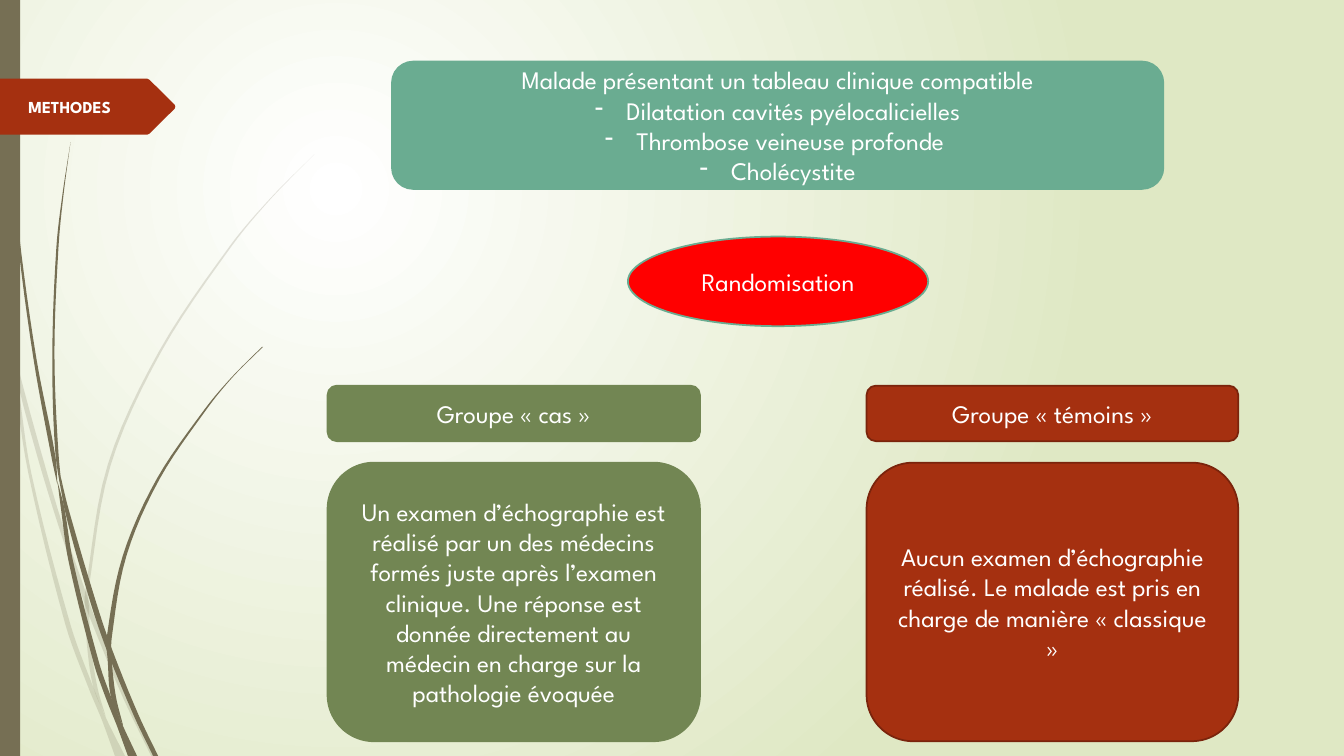
from pptx import Presentation
from pptx.dml.color import RGBColor
from pptx.enum.shapes import MSO_SHAPE as Form
from pptx.enum.text import MSO_ANCHOR as Anchor, MSO_AUTO_SIZE as Fit, PP_ALIGN as Align
from pptx.oxml.ns import qn
from pptx.util import Pt
from lxml.etree import SubElement as sub

WHITE = RGBColor(0xFF, 0xFF, 0xFF)
LIME = RGBColor(0xDF, 0xE8, 0xC4)
BROWN = RGBColor(0x76, 0x6F, 0x54)
RUST = RGBColor(0xA5, 0x30, 0x10)
DARK = RGBColor(0x7A, 0x24, 0x0C)
GREEN = RGBColor(0x72, 0x86, 0x53)
TEAL = RGBColor(0x6A, 0xAC, 0x91)
RED = RGBColor(0xFF, 0x00, 0x00)

WIDE, HIGH = 960, 540
BODY = {"name": "League Spartan", "size": Pt(18), "bold": False}
HEAD = {"name": "League Spartan", "size": Pt(12), "bold": True}

# Each stem is a list of rows: y, left edge, right edge
PALE = [
    [(203, 0, 0), (215.3, 0, 2.9), (231.8, 3.6, 6.5), (252, 7.9, 7.9)],
    [(248.4, 10.1, 10.1), (270.7, 12.2, 15.1), (323.3, 25.9, 29.5), (374.4, 41.4, 44.6),
     (424.8, 58.3, 61.9), (439.2, 63.4, 67), (498.2, 87.8, 91.4), (540, 108, 111.6)],
    [(252, 7.9, 7.9), (270.7, 10.1, 12.2), (337.7, 20.2, 22.3), (446.4, 46.8, 50.4),
     (491.8, 63.4, 67), (514.1, 72.7, 76.3), (540, 82.1, 89.3)],
    [(110.2, 224.6, 224.6), (141.8, 193, 193.7), (175.7, 164.2, 165.6),
     (250.6, 113.8, 115.6), (331.9, 77, 79.2), (420.5, 61.2, 63.4), (431.3, 60.5, 63.4),
     (465.1, 62.6, 65.5), (491.8, 67, 69.8), (511.9, 75.6, 75.6)],
]
DEEP = [
    [(0, 2.2, 2.9), (34.6, 2.9, 3.6), (79.2, 5, 5.8), (167.8, 12.2, 13.7),
     (255.6, 23.8, 25.9), (326.2, 36.7, 39.6), (346.3, 41, 41)],
    [(339.8, 43.2, 43.2), (363.6, 46.1, 49), (424.8, 63, 67), (461.5, 75.2, 79.2),
     (509.8, 95, 98.6), (540, 109.4, 113)],
    [(343.4, 41, 41), (363.6, 43.6, 46.1), (401, 49, 52.2), (473.8, 67, 70.9),
     (497.5, 75.2, 79.2), (518.4, 83.5, 87.8), (540, 91.4, 97.9)],
    [(101.5, 50.4, 50.4), (139, 44.6, 45.4), (176.4, 40.3, 41.8), (251.3, 37.4, 38.9),
     (324, 39.6, 41.8), (363.6, 46.1, 46.1)],
    [(247.7, 187.2, 187.9), (269.3, 165.6, 166.3), (292.3, 146.2, 147.6),
     (342, 112, 114.1), (396.7, 87.8, 90.4), (455, 76.3, 79.9), (472.3, 77, 79.9),
     (497.5, 79.2, 82.8), (517.7, 87.5, 87.8)],
]


def style(obj, vals):
    for key, val in vals.items():
        setattr(obj, key, val)


def paint(shape, fill, line=None):
    shape.shadow.inherit = False
    shape.fill.solid()
    shape.fill.fore_color.rgb = fill
    if line is None:
        shape.line.fill.background()
    else:
        shape.line.color.rgb = line
        shape.line.width = Pt(1.25)


def write(par, text, font, align):
    par.text = text
    par.alignment = align
    style(par.font, font)
    par.font.color.rgb = WHITE


def card(slide, form, box, lines, fill, line):
    shape = slide.shapes.add_shape(form, *map(Pt, box))
    paint(shape, fill, line)
    frame = shape.text_frame
    style(frame, {"word_wrap": True, "vertical_anchor": Anchor.MIDDLE})
    for i, text in enumerate(lines):
        par = frame.paragraphs[0] if i == 0 else frame.add_paragraph()
        write(par, text, BODY, Align.CENTER)
        if i:
            dash(par)


def dash(par):
    props = par._p.get_or_add_pPr()
    props.set("marL", str(Pt(22.5)))
    props.set("indent", str(-Pt(22.5)))
    mark = sub(props, qn("a:buChar"))
    mark.set("char", "-")
    # Bullet tags come before the run defaults
    rest = props.find(qn("a:defRPr"))
    if rest is not None:
        rest.addprevious(mark)


def curve(knots, steps=6):
    """Smooth the (y, x) knots into (x, y) points."""
    last = len(knots) - 1

    def slope(i):
        (y0, x0), (y1, x1) = knots[max(i - 1, 0)], knots[min(i + 1, last)]
        return (x1 - x0) / (y1 - y0)

    dots = []
    for i in range(last):
        (y0, x0), (y1, x1) = knots[i], knots[i + 1]
        gap = y1 - y0
        for t in (n / steps for n in range(steps)):
            x = (x0 * (1 + 2 * t) * (1 - t) ** 2 + x1 * t * t * (3 - 2 * t)
                 + gap * t * (1 - t) * (slope(i) * (1 - t) - slope(i + 1) * t))
            dots.append((x, y0 + gap * t))
    return dots + [(knots[-1][1], knots[-1][0])]


def outline(slide, dots, fill):
    dots = [(Pt(x), Pt(y)) for x, y in dots]
    pen = slide.shapes.build_freeform(*dots[0], scale=1)
    pen.add_line_segments(dots[1:], close=True)
    shape = pen.convert_to_shape()
    paint(shape, fill)
    return shape


def plant(slide, stems, alpha=None):
    for rows in stems:
        left = curve([(y, a) for y, a, b in rows])
        right = curve([(y, b) for y, a, b in rows])
        shape = outline(slide, left + right[::-1], BROWN)
        if alpha:
            tint = shape._element.spPr.find(qn("a:solidFill"))[0]
            sub(tint, qn("a:alpha")).set("val", str(alpha * 1000))


def backdrop(slide):
    fill = slide.background.fill
    fill.gradient()
    for stop, tone in zip(fill.gradient_stops, (WHITE, LIME)):
        stop.color.rgb = tone
    # Round glow in the upper left quarter
    grad = next(slide._element.iter(qn("a:gradFill")))
    grad.remove(grad.find(qn("a:lin")))
    glow = sub(grad, qn("a:path"))
    glow.set("path", "circle")
    rect = sub(glow, qn("a:fillToRect"))
    for side, val in zip("ltrb", (50, 50, 100, 100)):
        rect.set(side, str(val * 1000))


def banner(slide, box, text):
    x, y, w, h = box
    tip, mid, cut = x + w, y + h / 2, x + w - 18.4
    outline(slide, [(x, y), (cut - 1.6, y), (cut, y + 0.8), (tip - 0.4, mid - 1.4),
                    (tip, mid), (tip - 0.4, mid + 1.4), (cut, y + h - 0.8),
                    (cut - 1.6, y + h), (x, y + h)], RUST)
    title = slide.shapes.title
    place = (x + 13, y + 9.3, 105.8, 20.9)
    style(title, dict(zip(("left", "top", "width", "height"), map(Pt, place))))
    style(title.text_frame, {"word_wrap": True, "auto_size": Fit.NONE,
                             "vertical_anchor": Anchor.TOP})
    write(title.text_frame.paragraphs[0], text, HEAD, Align.LEFT)
    # Bring the title in front of its banner
    slide.shapes._spTree.append(title._element)


def group(slide, box, name, text, fill, line):
    x, y, w, h = box
    head, gap = 39.6, 15.4
    card(slide, Form.ROUNDED_RECTANGLE, (x, y, w, head), [name], fill, line)
    card(slide, Form.ROUNDED_RECTANGLE, (x, y + head + gap, w, h - head - gap),
         [text], fill, line)


def main():
    deck = Presentation()
    style(deck, {"slide_width": Pt(WIDE), "slide_height": Pt(HIGH)})
    slide = deck.slides.add_slide(deck.slide_layouts[5])

    # Decoration
    backdrop(slide)
    plant(slide, PALE, 20)
    plant(slide, DEEP)
    paint(slide.shapes.add_shape(Form.RECTANGLE, 0, 0, Pt(14.4), Pt(HIGH)), BROWN)
    banner(slide, (0, 56.2, 125.2, 40), "METHODES")

    # Two study arms
    group(slide, (234, 275.5, 266, 254), "Groupe « cas »",
          "Un examen d’échographie est réalisé par un des médecins formés juste après "
          "l’examen clinique. Une réponse est donnée directement au médecin en charge "
          "sur la pathologie évoquée", GREEN, GREEN)
    group(slide, (619, 275.5, 265.5, 254), "Groupe « témoins »",
          "Aucun examen d’échographie réalisé. Le malade est pris en charge de manière "
          "« classique »", RUST, DARK)

    # Entry criteria and draw
    card(slide, Form.ROUNDED_RECTANGLE, (280, 44, 551, 91),
         ["Malade présentant un tableau clinique compatible",
          "Dilatation cavités pyélocalicielles",
          "Thrombose veineuse profonde ",
          "Cholécystite"], TEAL, TEAL)
    card(slide, Form.OVAL, (448.5, 169, 214.5, 64), ["Randomisation"], RED, TEAL)

    deck.save("out.pptx")


if __name__ == "__main__":
    main()
